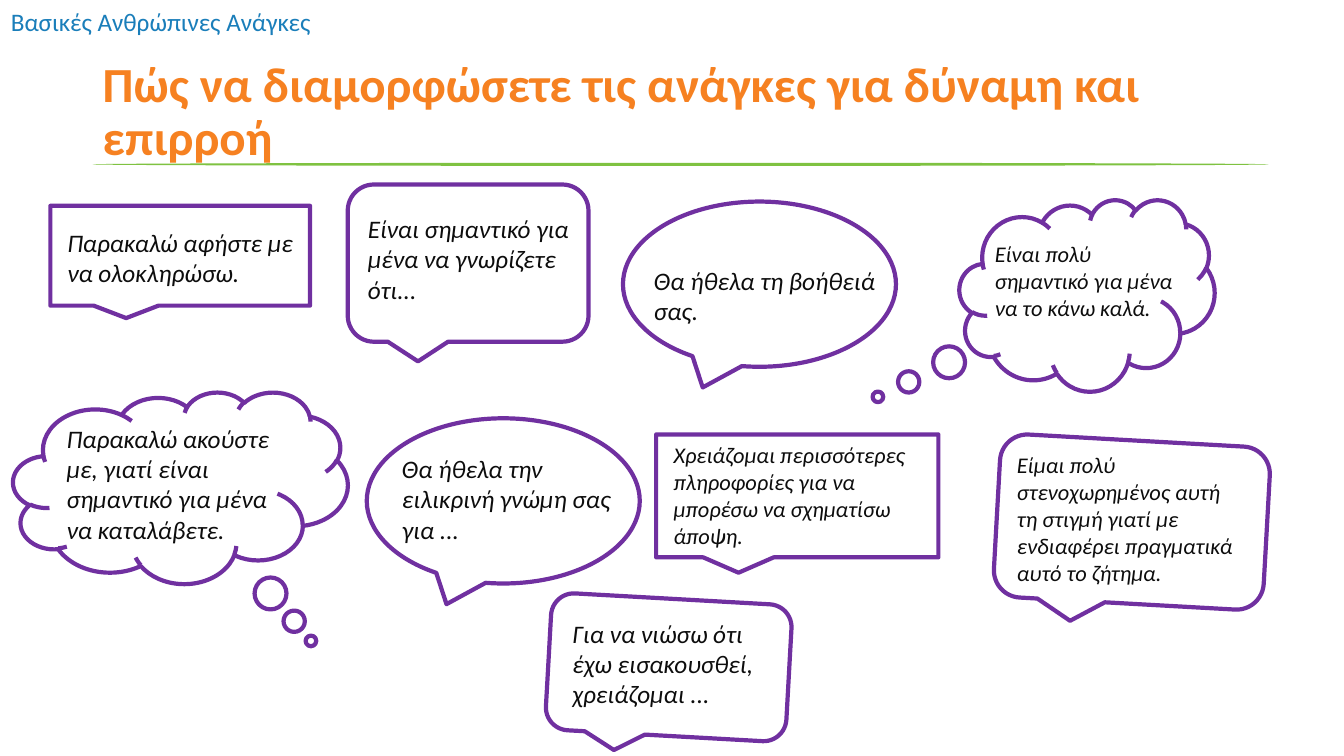
from pptx import Presentation
from pptx.dml.color import RGBColor
from pptx.enum.shapes import MSO_SHAPE
from pptx.enum.text import MSO_ANCHOR, MSO_AUTO_SIZE, PP_ALIGN
from pptx.util import Pt

WHITE = RGBColor(0xFF, 0xFF, 0xFF)
BLUE = RGBColor(0x1A, 0x7E, 0xBA)
GREEN = RGBColor(0x7F, 0xC2, 0x41)
ORANGE = RGBColor(0xF6, 0x81, 0x21)
PURPLE = RGBColor(0x70, 0x30, 0xA0)
INK = RGBColor(0x0D, 0x0D, 0x0D)

BOX = MSO_SHAPE.RECTANGULAR_CALLOUT
ROUNDED = MSO_SHAPE.ROUNDED_RECTANGULAR_CALLOUT
OVAL = MSO_SHAPE.OVAL_CALLOUT
CLOUD = MSO_SHAPE.CLOUD_CALLOUT
TAIL = (-0.208, 0.625)  # tip offset from the centre, in widths and heights
REGULAR, SNUG = 18, 16  # snug wording stays inside the tighter bubbles

# outline, its place, tilt, tail tip, wording, place of the wording, its size
BUBBLES = [
    (BOX, (36, 147, 185.5, 71.3), 0, TAIL,
     "Παρακαλώ αφήστε με να ολοκληρώσω.", (41, 159, 185, 51), REGULAR),
    (ROUNDED, (248.4, 131.8, 172, 112.3), 0, TAIL,
     "Είναι σημαντικό για μένα να γνωρίζετε ότι...",
     (255.6, 149, 168, 73), REGULAR),
    (OVAL, (445, 144, 195, 118), 0, TAIL,
     "Θα ήθελα τη βοήθειά σας.", (460, 185.8, 180, 51), REGULAR),
    (CLOUD, (685.4, 142.6, 182.2, 136.8), 0, (-0.82, 0.53),
     "Είναι πολύ σημαντικό για μένα να το κάνω καλά.",
     (703.5, 168, 146, 66), SNUG),
    (CLOUD, (9.4, 280, 239, 136.8), 0, (0.39, 0.8),
     "Παρακαλώ ακούστε με, γιατί είναι σημαντικό για μένα\vνα καταλάβετε.",
     (40.5, 298.8, 181, 94), REGULAR),
    (OVAL, (262, 298.8, 195, 118), 0, TAIL,
     "Θα ήθελα την ειλικρινή γνώμη σας για ...",
     (280, 320.4, 173.5, 73), REGULAR),
    (BOX, (468.7, 310.3, 201.6, 87.8), 0, TAIL,
     "Χρειάζομαι περισσότερες πληροφορίες για να μπορέσω να σχηματίσω άποψη.",
     (474, 311.5, 195, 85), SNUG),
    (ROUNDED, (712, 314.6, 193, 116.6), 3.2, TAIL,
     "Είμαι πολύ στενοχωρημένος αυτή τη στιγμή γιατί με ενδιαφέρει πραγματικά\n"
     "αυτό το ζήτημα.", (719.3, 319, 172, 104), SNUG),
    (ROUNDED, (391.7, 427.7, 172, 97.9), 3.2, TAIL,
     "Για να νιώσω ότι έχω εισακουσθεί, χρειάζομαι ...",
     (401.8, 437.8, 165, 73), REGULAR),
]


def add_wording(place, wording, size, color, italic):
    box = slide.shapes.add_textbox(*map(Pt, place))
    frame = box.text_frame
    frame.word_wrap = True
    frame.text = wording
    for paragraph in frame.paragraphs:
        paragraph.font.name = "Calibri"
        paragraph.font.size = Pt(size)
        paragraph.font.italic = italic
        paragraph.font.color.rgb = color
    return box


presentation = Presentation()
presentation.slide_width = Pt(960)
presentation.slide_height = Pt(540)
slide = presentation.slides.add_slide(presentation.slide_layouts[5])

title = slide.shapes.title
title.left, title.top, title.width, title.height = map(Pt, (66.2, 28.8, 871, 104.4))
title.text_frame.text = "Πώς να διαμορφώσετε τις ανάγκες για δύναμη και επιρροή"
title.text_frame.auto_size = MSO_AUTO_SIZE.NONE
title.text_frame.vertical_anchor = MSO_ANCHOR.MIDDLE
heading = title.text_frame.paragraphs[0]
heading.alignment = PP_ALIGN.LEFT
heading.line_spacing = 0.9
heading.font.name = "Calibri"
heading.font.size = Pt(35)
heading.font.bold = True
heading.font.color.rgb = ORANGE

topic = add_wording((0.7, 0.7, 281, 29), "Βασικές Ανθρώπινες Ανάγκες", REGULAR, BLUE, False)
topic.fill.solid()
topic.fill.fore_color.rgb = WHITE

divider = slide.shapes.add_shape(MSO_SHAPE.OVAL, Pt(66.2), Pt(116.3), Pt(840), Pt(2.2))
divider.shadow.inherit = False
divider.fill.solid()
divider.fill.fore_color.rgb = GREEN
divider.line.fill.background()

for outline, place, tilt, tail, wording, wording_place, size in BUBBLES:
    bubble = slide.shapes.add_shape(outline, *map(Pt, place))
    bubble.adjustments[0], bubble.adjustments[1] = tail
    bubble.rotation = tilt
    bubble.shadow.inherit = False
    bubble.fill.background()
    bubble.line.color.rgb = PURPLE
    bubble.line.width = Pt(3)
    add_wording(wording_place, wording, size, INK, True)

presentation.save("out.pptx")
